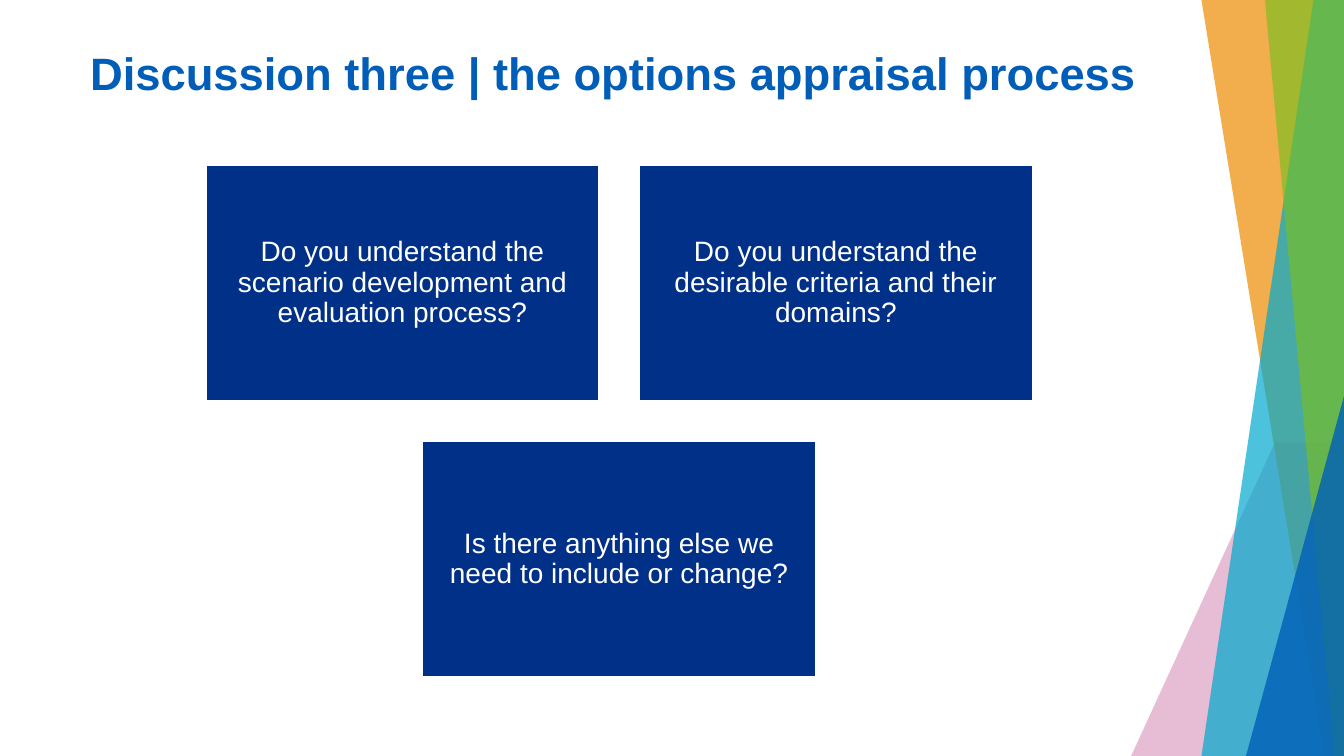
from lxml.etree import SubElement
from pptx import Presentation
from pptx.dml.color import RGBColor
from pptx.enum.shapes import MSO_SHAPE
from pptx.enum.text import MSO_ANCHOR, PP_ALIGN
from pptx.oxml.ns import qn
from pptx.util import Pt

COLORS = {
    "plum": "AE2573",
    "orange": "ED8B00",
    "cyan": "00A9CE",
    "green": "78BE20",
    "blue": "005EB8",
    "navy": "003087",
    "white": "FFFFFF",
}
SLIDE_W, SLIDE_H = 960, 540
CARD_W, CARD_H = 281.2, 168.8
CARD_GAP = 28.4
CARDS_LEFT, CARDS_TOP = 146.9, 117.7
CARDS_PER_ROW = 2

BANDS = [
    ("plum", 30, [(910.8, 316), (SLIDE_W, 316), (SLIDE_W, SLIDE_H), (808, SLIDE_H)]),
    ("orange", 70, [(858.2, 0), (SLIDE_W, 0), (SLIDE_W, SLIDE_H), (946.1, SLIDE_H)]),
    ("cyan", 70, [(938.2, 0), (SLIDE_W, 0), (SLIDE_W, SLIDE_H), (858.2, SLIDE_H)]),
    ("green", 65, [(903.6, 0), (SLIDE_W, 0), (SLIDE_W, SLIDE_H), (953.3, SLIDE_H)]),
]
QUESTIONS = [
    "Do you understand the scenario development and evaluation process?",
    "Do you understand the desirable criteria and their domains?",
    "Is there anything else we need to include or change?",
]


def rgb(name):
    return RGBColor.from_string(COLORS[name])


def fill_shape(sp, color, opacity=100):
    sp.shadow.inherit = False
    sp.fill.solid()
    sp.fill.fore_color.rgb = rgb(color)
    sp.line.fill.background()
    if opacity < 100:
        clr = sp.fill._xPr.find(qn("a:solidFill"))[0]
        SubElement(clr, qn("a:alpha"), val=str(opacity * 1000))


def write_text(sp, text, size, color, bold=False, spacing=1.0,
               anchor=MSO_ANCHOR.MIDDLE, insets=(5.8, 5.8, 5.8, 5.8)):
    tf = sp.text_frame
    tf.word_wrap = True
    tf.vertical_anchor = anchor
    tf.margin_left, tf.margin_top, tf.margin_right, tf.margin_bottom = map(Pt, insets)
    p = tf.paragraphs[0]
    p.alignment = PP_ALIGN.CENTER
    p.line_spacing = spacing
    r = p.add_run()
    r.text = text
    r.font.name = "Arial"
    r.font.size = Pt(size)
    r.font.bold = bold
    r.font.color.rgb = rgb(color)


def add_band(s, color, opacity, points):
    start, *rest = [(Pt(x), Pt(y)) for x, y in points]
    builder = s.shapes.build_freeform(*start)
    builder.add_line_segments(rest, close=True)
    fill_shape(builder.convert_to_shape(), color, opacity)


def add_corner(s):
    sp = s.shapes.add_shape(MSO_SHAPE.ISOSCELES_TRIANGLE,
                            Pt(890), Pt(283), Pt(70), Pt(257))
    sp.adjustments[0] = 1.0
    fill_shape(sp, "blue", 80)


def add_title(s, text):
    sp = s.shapes.add_textbox(Pt(53.3), Pt(25.2), Pt(778.3), Pt(58.3))
    write_text(sp, text, 32.4, "blue", bold=True, anchor=MSO_ANCHOR.TOP,
               insets=(7.2, 7.2, 7.2, 3.6))


def add_card(s, x, y, text):
    sp = s.shapes.add_shape(MSO_SHAPE.RECTANGLE, Pt(x), Pt(y), Pt(CARD_W), Pt(CARD_H))
    fill_shape(sp, "navy")
    sp.line.color.rgb = rgb("white")
    sp.line.width = Pt(1.5)
    write_text(sp, text, 20, "white", spacing=0.9)


def add_cards(s, questions):
    step_x, step_y = CARD_W + CARD_GAP, CARD_H + CARD_GAP
    for i, question in enumerate(questions):
        row, col = divmod(i, CARDS_PER_ROW)
        in_row = min(CARDS_PER_ROW, len(questions) - row * CARDS_PER_ROW)
        indent = (CARDS_PER_ROW - in_row) * step_x / 2
        add_card(s, CARDS_LEFT + indent + col * step_x,
                 CARDS_TOP + row * step_y, question)


def main():
    prs = Presentation()
    prs.slide_width, prs.slide_height = Pt(SLIDE_W), Pt(SLIDE_H)
    s = prs.slides.add_slide(prs.slide_layouts[6])
    for band in BANDS:
        add_band(s, *band)
    add_corner(s)
    add_title(s, "Discussion three | the options appraisal process ")
    add_cards(s, QUESTIONS)
    prs.save("out.pptx")


if __name__ == "__main__":
    main()
